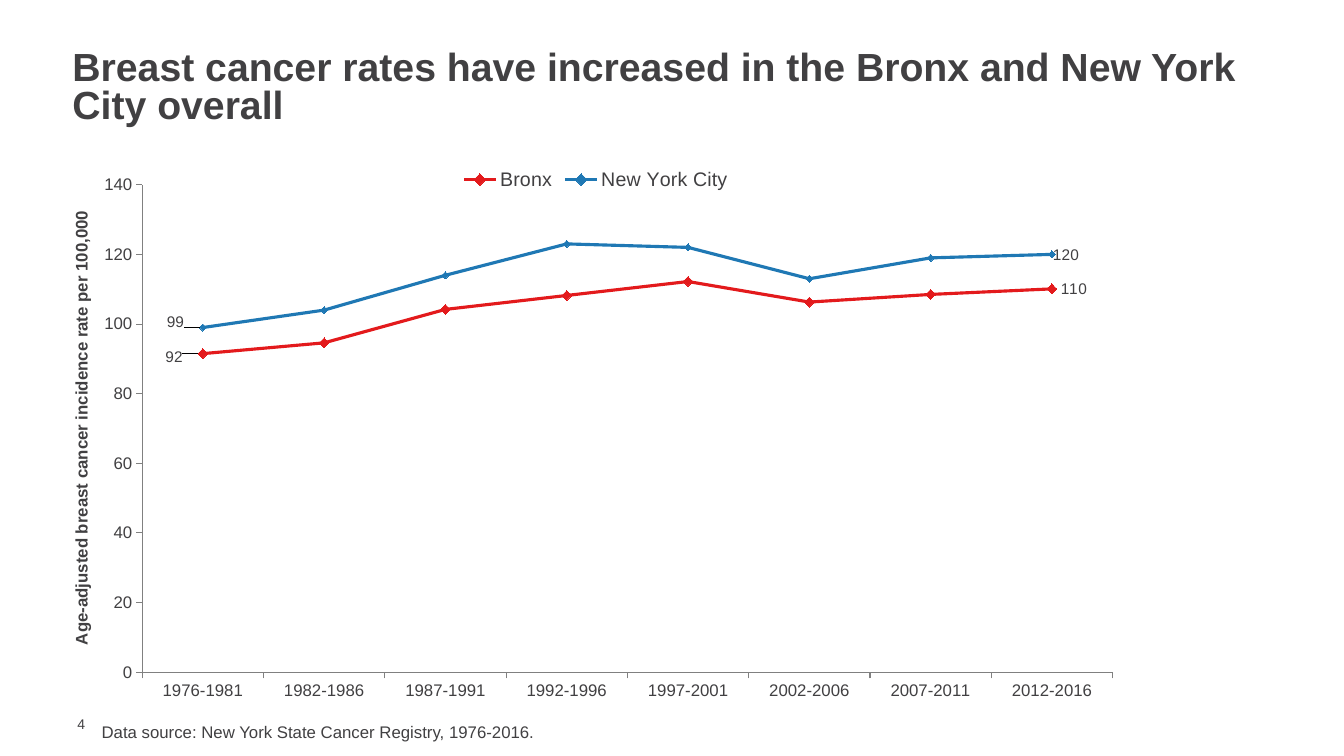
import pptx
import pptx.chart.data
import pptx.dml.color
import pptx.enum.chart
import pptx.enum.text
import pptx.oxml
import pptx.oxml.ns
import pptx.util
from pptx.util import Inches

RGBColor = pptx.dml.color.RGBColor
GREY = RGBColor(0x41, 0x40, 0x42)
AXIS = RGBColor(0x80, 0x80, 0x80)
RED = RGBColor(0xE3, 0x1A, 0x1C)
BLUE = RGBColor(0x1F, 0x78, 0xB4)
FONT = "Arial"
SPANS = ["1976-1981", "1982-1986", "1987-1991", "1992-1996",
         "1997-2001", "2002-2006", "2007-2011", "2012-2016"]
BRONX = [91.5, 94.6, 104.2, 108.2, 112.2, 106.3, 108.5, 110.1]
CITY = [99, 104, 114, 123, 122, 113, 119, 120]
POS = pptx.enum.chart.XL_LABEL_POSITION
TICK = pptx.enum.chart.XL_TICK_MARK
NS = 'xmlns:c="http://schemas.openxmlformats.org/drawingml/2006/chart"'
LEADER = (
    f'<c:extLst {NS}><c:ext uri="{{CE6537A1-D6FC-4f65-9D91-7224C49458BB}}" '
    'xmlns:c15="http://schemas.microsoft.com/office/drawing/2012/chart">'
    '<c15:showLeaderLines val="1"/></c:ext></c:extLst>')


def style(font, size, bold=False):
    font.name = FONT
    font.size = pptx.util.Pt(size)
    font.bold = bold
    font.color.rgb = GREY


def add_text(slide, text, box, size, bold=False, middle=False, space=None):
    shape = slide.shapes.add_textbox(*[Inches(n) for n in box])
    frame = shape.text_frame
    frame.word_wrap = True
    if middle:
        frame.vertical_anchor = pptx.enum.text.MSO_ANCHOR.MIDDLE
    para = frame.paragraphs[0]
    if space:
        para.line_spacing = space
    run = para.add_run()
    run.text = text
    style(run.font, size, bold)
    return frame


def layout(x, y, w=None, h=None):
    """Manual chart layout; with a size it places the inner plot."""
    edge = '<c:xMode val="edge"/><c:yMode val="edge"/>'
    head, size = "", ""
    if w:
        head = '<c:layoutTarget val="inner"/>' + edge
        size = f'<c:w val="{w}"/><c:h val="{h}"/>'
    return pptx.oxml.parse_xml(
        f'<c:layout {NS}><c:manualLayout>{head}<c:x val="{x}"/>'
        f'<c:y val="{y}"/>{size}</c:manualLayout></c:layout>')


def set_axis(axis):
    axis.has_major_gridlines = False
    axis.major_tick_mark = TICK.OUTSIDE
    axis.minor_tick_mark = TICK.NONE
    style(axis.tick_labels.font, 12)
    axis.format.line.color.rgb = AXIS
    axis.format.line.width = pptx.util.Pt(0.75)


def set_line(line, color, size):
    line.smooth = False
    line.format.line.color.rgb = color
    line.format.line.width = pptx.util.Pt(2.25)
    mark = line.marker
    mark.style = pptx.enum.chart.XL_MARKER_STYLE.DIAMOND
    mark.size = size
    mark.format.fill.solid()
    mark.format.fill.fore_color.rgb = color
    mark.format.line.color.rgb = color


def add_label(line, index, place, shift=None):
    label = line.points[index].data_label
    style(label.font, 11)
    label.position = place
    item = line.data_labels._element.xpath(
        f'c:dLbl[c:idx/@val="{index}"]')[0]
    item.insert(1, pptx.oxml.parse_xml(
        f'<c:numFmt {NS} formatCode="#,##0" sourceLinked="0"/>'))
    if shift:
        item.insert(1, layout(*shift))


def add_rates(slide):
    data = pptx.chart.data.CategoryChartData(number_format="0")
    data.categories = SPANS
    data.add_series("Bronx", BRONX)
    data.add_series("New York City", CITY)
    chart = slide.shapes.add_chart(
        pptx.enum.chart.XL_CHART_TYPE.LINE_MARKERS, Inches(0.41),
        Inches(1.56), Inches(11), Inches(5.58), data).chart
    style(chart.font, 10)
    chart.has_title = False
    chart.has_legend = True
    chart.legend.position = pptx.enum.chart.XL_LEGEND_POSITION.TOP
    chart.legend.include_in_layout = False
    style(chart.legend.font, 14)

    # Plot area
    area = chart._chartSpace.chart.plotArea
    for old in area.findall(pptx.oxml.ns.qn("c:layout")):
        area.remove(old)
    area.insert(0, layout(0.091, 0.049, 0.875, 0.867))

    # Axes
    set_axis(chart.category_axis)
    rate = chart.value_axis
    set_axis(rate)
    rate.minimum_scale, rate.maximum_scale, rate.major_unit = 0, 140, 20
    rate.tick_labels.number_format = "0"
    rate.tick_labels.number_format_is_linked = False
    run = rate.axis_title.text_frame.paragraphs[0].add_run()
    run.text = "Age-adjusted breast cancer incidence rate per 100,000"
    style(run.font, 12, True)
    title = rate.axis_title._element
    for old in title.findall(pptx.oxml.ns.qn("c:layout")):
        title.remove(old)
    place = layout(0.024, 0.09)
    spot = place[0]
    for name in ("c:yMode", "c:xMode"):
        spot.insert(0, pptx.oxml.parse_xml(f'<{name} {NS} val="edge"/>'))
    title.insert(1, place)

    # Lines with labels at both ends
    bronx, city = chart.plots[0].series
    set_line(bronx, RED, 7)
    set_line(city, BLUE, 5)
    for line in (bronx, city):
        line.data_labels.show_value = False
    add_label(bronx, 0, POS.LEFT, (-0.01, 0.005))
    add_label(bronx, 7, POS.RIGHT)
    add_label(city, 0, POS.LEFT, (-0.01, -0.01))
    add_label(city, 7, POS.RIGHT, (-0.006, 0))
    bronx.data_labels._element.append(pptx.oxml.parse_xml(LEADER))


def main():
    deck = pptx.Presentation()
    deck.slide_width, deck.slide_height = Inches(13.33), Inches(7.5)
    slide = deck.slides.add_slide(deck.slide_layouts[6])

    # Page number and source
    page = add_text(slide, "4", (0.67, 7.1, 0.43, 0.17), 10, middle=True)
    page.margin_top = page.margin_right = page.margin_bottom = 0
    add_text(slide, "Data source: New York State Cancer Registry, 1976-2016.",
             (0.91, 7.11, 9.92, 0.3), 12)

    # Title and chart
    add_text(slide, "Breast cancer rates have increased in the Bronx and "
             "New York City overall", (0.62, 0.46, 12.08, 0.85), 28,
             bold=True, middle=True, space=0.8)
    add_rates(slide)
    deck.save("out.pptx")


if __name__ == "__main__":
    main()
